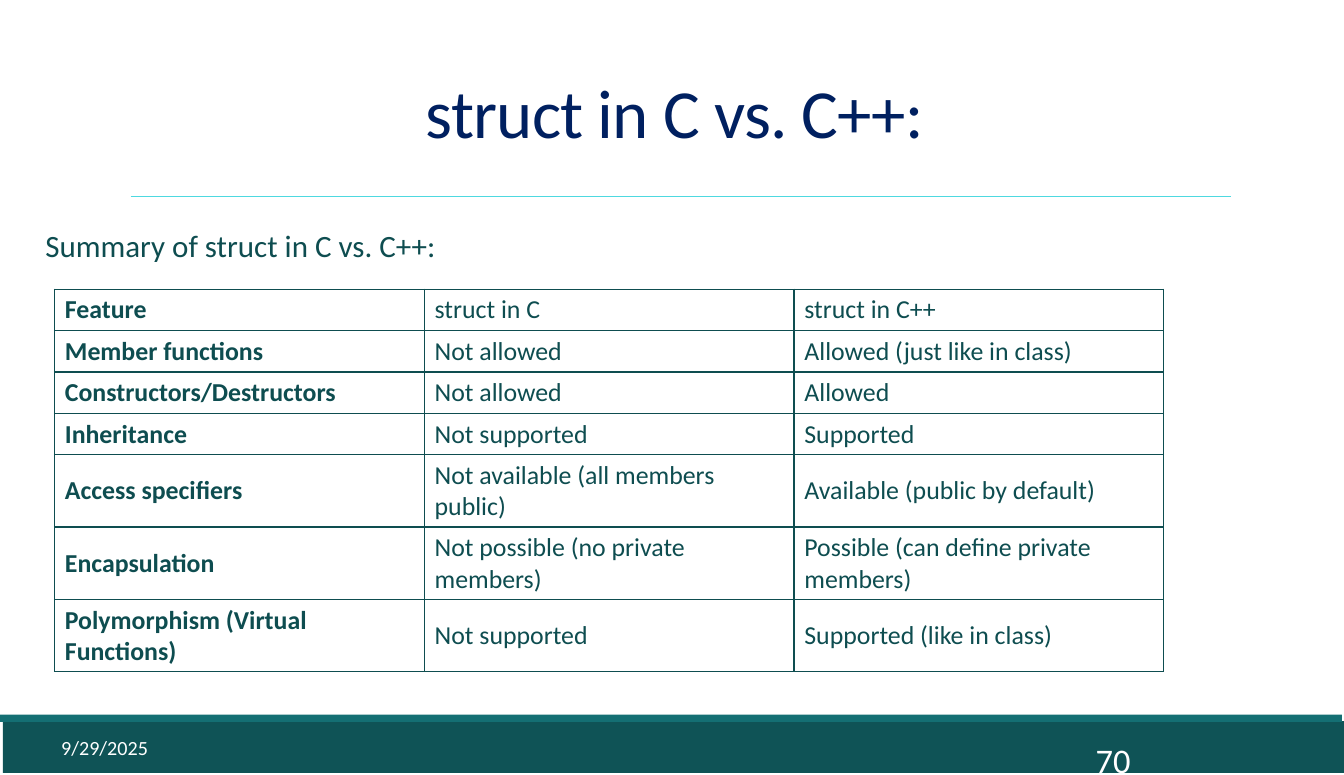
from lxml.etree import SubElement
from pptx import Presentation
from pptx.dml.color import RGBColor
from pptx.enum.shapes import MSO_CONNECTOR as CONN, MSO_SHAPE as SHAPE
from pptx.enum.text import MSO_ANCHOR as ANCHOR, MSO_AUTO_SIZE as AUTO, PP_ALIGN as ALIGN
from pptx.oxml.ns import qn
from pptx.util import Pt

FONT = "Calibri"
INK, NAVY, WHITE = "0E4D50", "002060", "FFFFFF"
BAND, STRIPE, RULE = "0F5356", "146F73", "4ED9E0"

ROWS = [
    ("Feature", "struct in C", "struct in C++"),
    ("Member functions", "Not allowed", "Allowed (just like in class)"),
    ("Constructors/Destructors", "Not allowed", "Allowed"),
    ("Inheritance", "Not supported", "Supported"),
    ("Access specifiers", "Not available (all members public)", "Available (public by default)"),
    ("Encapsulation", "Not possible (no private members)", "Possible (can define private members)"),
    ("Polymorphism (Virtual Functions)", "Not supported", "Supported (like in class)"),
]
ROW_HEIGHTS = [28] * 4 + [50] * 3


def rgb(color):
    return RGBColor.from_string(color)


def write(tf, text, size=18, color=INK, bold=False, align=ALIGN.LEFT, line=None):
    p = tf.paragraphs[0]
    p.alignment = align
    p.line_spacing = line
    r = p.add_run()
    r.text = text
    r.font.name = FONT
    r.font.size = Pt(size)
    r.font.bold = bold
    r.font.color.rgb = rgb(color)
    return r


def add_label(s, text, x, y, w, h, anchor=ANCHOR.MIDDLE, **fmt):
    tf = s.shapes.add_textbox(Pt(x), Pt(y), Pt(w), Pt(h)).text_frame
    tf.word_wrap = True
    tf.vertical_anchor = anchor
    write(tf, text, **fmt)


def add_bar(s, color, x, y, w, h):
    sp = s.shapes.add_shape(SHAPE.RECTANGLE, Pt(x), Pt(y), Pt(w), Pt(h))
    sp.shadow.inherit = False
    sp.fill.solid()
    sp.fill.fore_color.rgb = rgb(color)
    sp.line.fill.background()


def add_footer(s, x, y, w, h):
    add_bar(s, BAND, x + 2, y + 4.5, w, h - 4.5)
    add_bar(s, STRIPE, x - 1.5, y, w, 5)
    add_label(s, "70", x + 756, y + 19.5, 101, 23, size=24, color=WHITE)
    add_label(s, "9/29/2025", x + 35.5, y + 8.5, 190, 29, size=14, color=WHITE)


def add_heading(s, x, y, w, h):
    title = s.shapes.title
    title.left, title.top, title.width, title.height = Pt(x), Pt(y), Pt(w), Pt(h)
    tf = title.text_frame
    tf.auto_size = AUTO.NONE
    tf.vertical_anchor = ANCHOR.BOTTOM
    r = write(tf, "struct in C vs. C++:", size=48, color=NAVY, align=ALIGN.CENTER, line=0.85)
    r.font._element.set("spc", "-50")
    rule_y = Pt(y + h + 26.5)
    rule = s.shapes.add_connector(CONN.STRAIGHT, Pt(x + 7), rule_y, Pt(x + w + 1), rule_y)
    rule.line.color.rgb = rgb(RULE)
    rule.line.width = Pt(0.5)
    SubElement(rule._element.spPr, qn("a:effectLst"))


def add_borders(cell, color, width):
    tc_pr = cell._tc.get_or_add_tcPr()
    for i, side in enumerate(("lnL", "lnR", "lnT", "lnB")):
        ln = tc_pr.makeelement(qn(f"a:{side}"), {"w": str(Pt(width))})
        fill = SubElement(ln, qn("a:solidFill"))
        SubElement(fill, qn("a:srgbClr"), val=color)
        tc_pr.insert(i, ln)


def add_comparison(s, x, y, w):
    frame = s.shapes.add_table(len(ROWS), len(ROWS[0]), Pt(x), Pt(y), Pt(w), Pt(sum(ROW_HEIGHTS)))
    table = frame.table
    table.first_row = table.horz_banding = False
    for column in table.columns:
        column.width = Pt(w / len(ROWS[0]))
    for row, height, texts in zip(table.rows, ROW_HEIGHTS, ROWS):
        row.height = Pt(height)
        for i, (cell, text) in enumerate(zip(row.cells, texts)):
            cell.fill.background()
            cell.vertical_anchor = ANCHOR.MIDDLE
            write(cell.text_frame, text, bold=i == 0)
            add_borders(cell, INK, 1)


def main():
    prs = Presentation()
    prs.slide_width, prs.slide_height = Pt(936), Pt(540)
    s = prs.slides.add_slide(prs.slide_layouts[5])
    add_footer(s, 0, 498, 936, 40.5)
    add_heading(s, 84, 22, 772, 88)
    add_comparison(s, 38, 201.5, 772.5)
    add_label(s, "Summary of struct in C vs. C++:", 24.5, 154, 323, 33, anchor=ANCHOR.TOP, size=21.6)
    prs.save("out.pptx")


if __name__ == "__main__":
    main()
